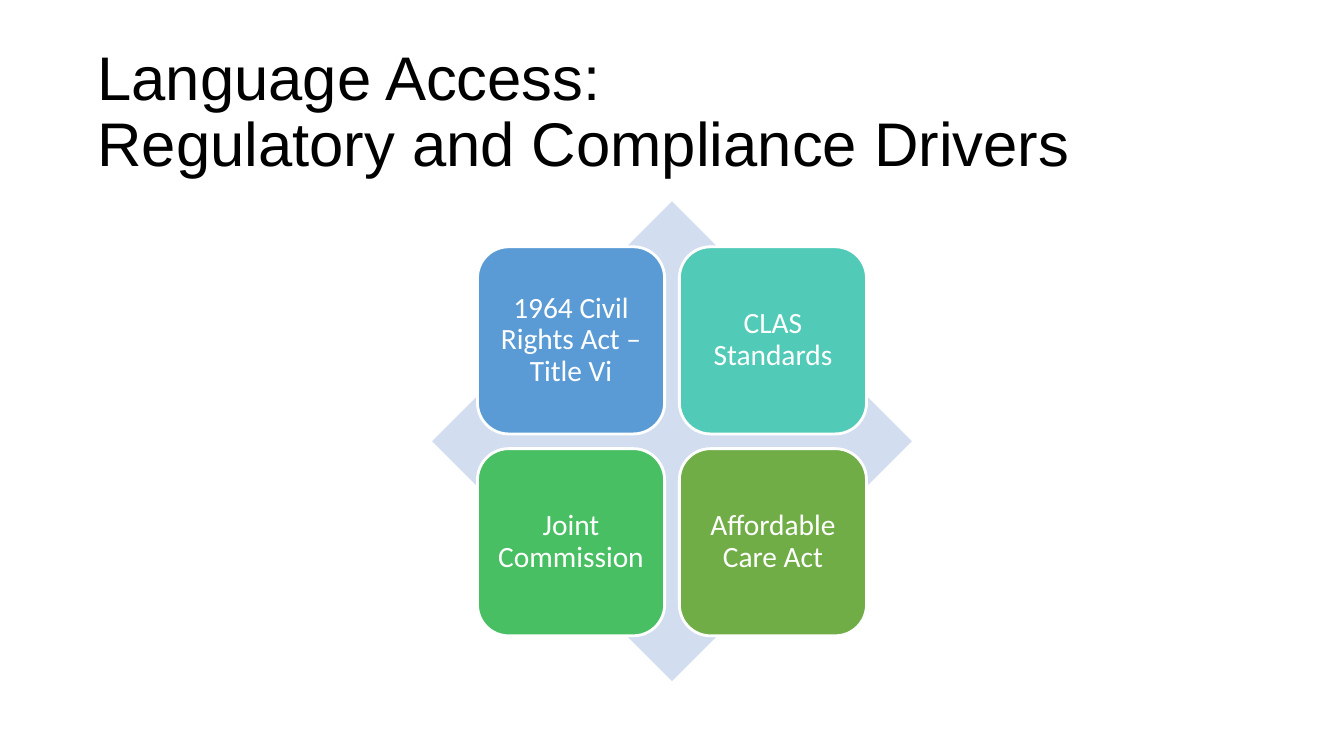
from pptx import Presentation
from pptx.dml.color import RGBColor
from pptx.enum.shapes import MSO_SHAPE
from pptx.enum.text import MSO_ANCHOR, PP_ALIGN
from pptx.util import Pt

COLORS = {
    "black": "000000",
    "white": "FFFFFF",
    "diamond": "D2DEEF",
    "blue": "5B9BD5",
    "teal": "52CAB8",
    "green": "49BF64",
    "olive": "70AD47",
}
DRIVERS = [
    ("1964 Civil Rights Act – Title Vi", "blue"),
    ("CLAS Standards", "teal"),
    ("Joint Commission", "green"),
    ("Affordable Care Act", "olive"),
]
CENTER_X, CENTER_Y = 480, 315.2
DIAMOND_SIZE = 342.7
TILE_SIZE = 133.7
TILE_PITCH = 144.2


def add_filled_shape(kind, left, top, size, color):
    shape = slide.shapes.add_shape(kind, Pt(left), Pt(top), Pt(size), Pt(size))
    shape.shadow.inherit = False
    shape.fill.solid()
    shape.fill.fore_color.rgb = RGBColor.from_string(COLORS[color])
    return shape


def write_text(shape, text, font_name, size, color, margin):
    """Fill a shape with one vertically centred, wrapped paragraph."""
    frame = shape.text_frame
    frame.word_wrap = True
    frame.vertical_anchor = MSO_ANCHOR.MIDDLE
    frame.margin_left = frame.margin_right = Pt(margin)
    frame.margin_top = frame.margin_bottom = Pt(margin)
    para = frame.paragraphs[0]
    para.text = text
    para.line_spacing = 0.9
    para.font.name = font_name
    para.font.size = Pt(size)
    para.font.color.rgb = RGBColor.from_string(COLORS[color])
    return para


deck = Presentation()
deck.slide_width, deck.slide_height = Pt(960), Pt(540)
slide = deck.slides.add_slide(deck.slide_layouts[6])

title = slide.shapes.add_textbox(Pt(66), Pt(28.75), Pt(828), Pt(104.4))
write_text(title, "Language Access:\vRegulatory and Compliance Drivers",
           "Arial", 44, "black", 3.6)

diamond = add_filled_shape(MSO_SHAPE.DIAMOND, CENTER_X - DIAMOND_SIZE / 2,
                           CENTER_Y - DIAMOND_SIZE / 2, DIAMOND_SIZE, "diamond")
diamond.line.fill.background()

first_left = CENTER_X - (TILE_PITCH + TILE_SIZE) / 2
first_top = CENTER_Y - (TILE_PITCH + TILE_SIZE) / 2
for index, (driver, color) in enumerate(DRIVERS):
    row, column = divmod(index, 2)
    tile = add_filled_shape(MSO_SHAPE.ROUNDED_RECTANGLE,
                            first_left + column * TILE_PITCH,
                            first_top + row * TILE_PITCH, TILE_SIZE, color)
    tile.line.color.rgb = RGBColor.from_string(COLORS["white"])
    tile.line.width = Pt(2)
    para = write_text(tile, driver, "Calibri", 21, "white", 6.3)
    para.alignment = PP_ALIGN.CENTER

deck.save("out.pptx")
